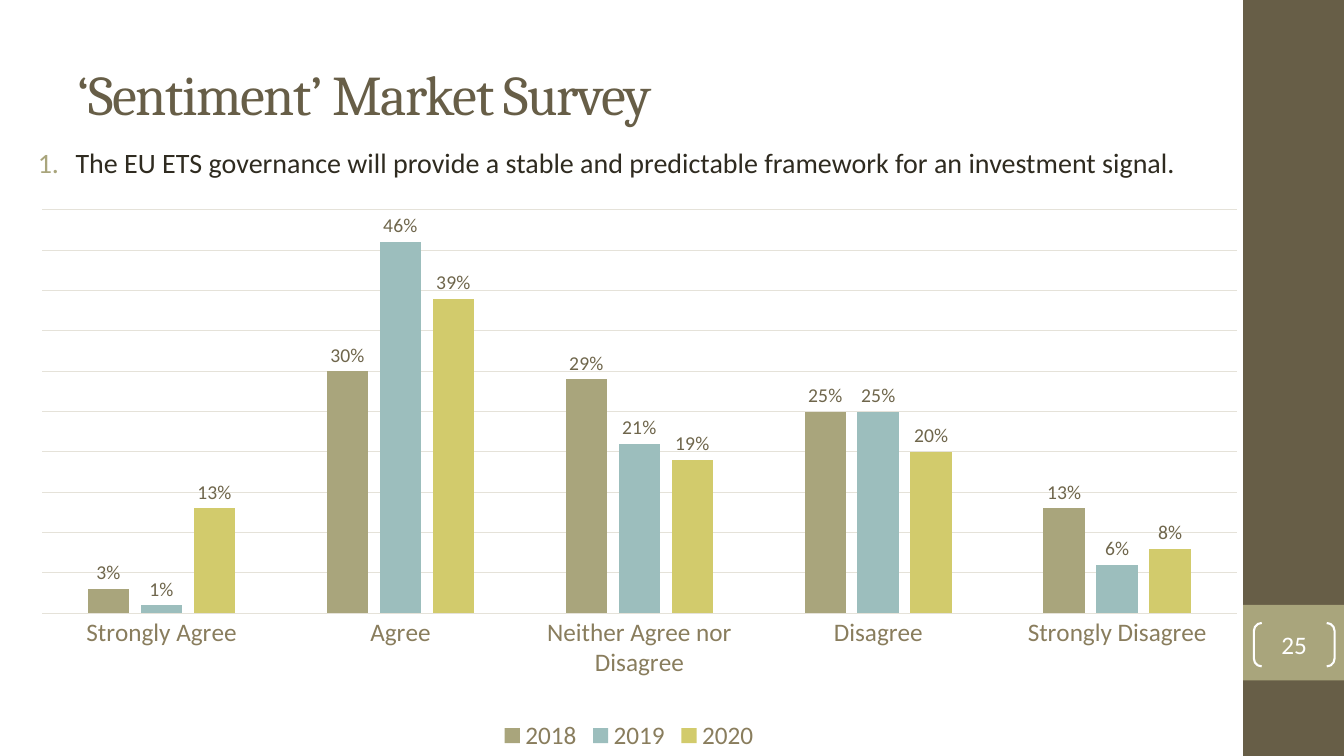
from dataclasses import dataclass

from pptx import Presentation
from pptx.chart.data import CategoryChartData
from pptx.dml.color import RGBColor
from pptx.enum import chart as charts, shapes, text
from pptx.oxml import parse_xml
from pptx.oxml.ns import nsdecls, qn
from pptx.util import Pt


@dataclass(frozen=True)
class Theme:
    heading_font: str = "Cambria"
    body_font: str = "Calibri"
    brown: str = "675E47"
    olive: str = "A9A57C"
    teal: str = "9CBEBD"
    yellow: str = "D2CB6C"
    ink: str = "2F2B20"
    axis_text: str = "897D5D"
    label_text: str = "6F664C"
    grid: str = "E5E2D9"
    white: str = "FFFFFF"
    title_size: int = 40
    statement_size: int = 20
    axis_size: int = 18
    label_size: int = 14


THEME = Theme()
CATEGORIES = ["Strongly Agree", "Agree", "Neither Agree nor Disagree",
              "Disagree", "Strongly Disagree"]
SERIES = [
    ("2018", THEME.olive, (0.03, 0.30, 0.29, 0.25, 0.13)),
    ("2019", THEME.teal, (0.01, 0.46, 0.21, 0.25, 0.06)),
    ("2020", THEME.yellow, (0.13, 0.39, 0.19, 0.20, 0.08)),
]


def rgb(color):
    return RGBColor.from_string(color)


def set_font(font, name, size, color):
    font.name = name
    font.size = Pt(size)
    font.color.rgb = rgb(color)


def place(shape, left, top, width, height):
    shape.left, shape.top = Pt(left), Pt(top)
    shape.width, shape.height = Pt(width), Pt(height)


def add_block(slide, left, top, width, height, color):
    block = slide.shapes.add_shape(
        shapes.MSO_SHAPE.RECTANGLE, Pt(left), Pt(top), Pt(width), Pt(height))
    block.shadow.inherit = False
    block.fill.solid()
    block.fill.fore_color.rgb = rgb(color)
    block.line.fill.background()


def add_page_number(slide, number):
    bracket = slide.shapes.add_shape(
        shapes.MSO_SHAPE.DOUBLE_BRACKET, Pt(895.7), Pt(445), Pt(57.6), Pt(31))
    bracket.adjustments[0] = 0.18
    bracket.shadow.inherit = False
    bracket.fill.background()
    bracket.line.color.rgb = rgb(THEME.white)
    bracket.line.width = Pt(1.5)
    frame = bracket.text_frame
    frame.margin_left = frame.margin_right = frame.margin_top = frame.margin_bottom = 0
    frame.vertical_anchor = text.MSO_ANCHOR.MIDDLE
    para = frame.paragraphs[0]
    para.text = number
    para.alignment = text.PP_ALIGN.CENTER
    set_font(para.font, THEME.body_font, THEME.axis_size, THEME.white)


def fill_title(title, words):
    place(title, 48, 21.6, 800, 90)
    frame = title.text_frame
    frame.auto_size = text.MSO_AUTO_SIZE.NONE
    frame.vertical_anchor = text.MSO_ANCHOR.MIDDLE
    para = frame.paragraphs[0]
    para.alignment = text.PP_ALIGN.LEFT
    span = para.add_run()
    span.text = words
    set_font(span.font, THEME.heading_font, THEME.title_size, THEME.brown)
    span.font._element.set("spc", "-100")


def fill_statement(body, words):
    """Write the survey statement as a numbered list item."""
    place(body, 10.8, 100, 837.4, 23)
    frame = body.text_frame
    frame.auto_size = text.MSO_AUTO_SIZE.NONE
    para = frame.paragraphs[0]
    para.text = words
    set_font(para.font, THEME.body_font, THEME.statement_size, THEME.ink)
    properties = para._p.get_or_add_pPr()
    properties.set("marL", str(Pt(36)))
    properties.set("indent", str(Pt(-27)))
    number_style = (
        f'<a:buClr {nsdecls("a")}><a:srgbClr val="{THEME.olive}"/></a:buClr>',
        f'<a:buFont {nsdecls("a")} typeface="+mj-lt"/>',
        f'<a:buAutoNum {nsdecls("a")} type="arabicPeriod"/>',
    )
    for position, xml in enumerate(number_style):
        properties.insert(position, parse_xml(xml))


def set_plot_layout(chart, **fractions):
    """Fix the inner plot area as fractions (x, y, w, h) of the chart."""
    area = chart._chartSpace.find(f'.//{qn("c:plotArea")}')
    for old in area.findall(qn("c:layout")):
        area.remove(old)
    sizes = "".join(f'<c:{key} val="{value}"/>' for key, value in fractions.items())
    area.insert(0, parse_xml(
        f'<c:layout {nsdecls("c")}><c:manualLayout><c:layoutTarget val="inner"/>'
        f'<c:xMode val="edge"/><c:yMode val="edge"/>{sizes}'
        '</c:manualLayout></c:layout>'))


def style_axes(chart):
    values = chart.value_axis
    values.minimum_scale, values.maximum_scale = 0, 0.5
    values.major_unit = 0.05
    values.has_major_gridlines = True
    values.visible = False
    categories = chart.category_axis
    categories.major_tick_mark = charts.XL_TICK_MARK.NONE
    set_font(categories.tick_labels.font, THEME.body_font, THEME.axis_size, THEME.axis_text)
    for line in (values.major_gridlines.format.line, categories.format.line):
        line.color.rgb = rgb(THEME.grid)
        line.width = Pt(0.75)


def style_series(series, color):
    series.format.fill.solid()
    series.format.fill.fore_color.rgb = rgb(color)
    labels = series.data_labels
    labels.show_value = True
    labels.number_format = "0%"
    labels.number_format_is_linked = False
    labels.position = charts.XL_LABEL_POSITION.OUTSIDE_END
    set_font(labels.font, THEME.body_font, THEME.label_size, THEME.label_text)


def add_survey_chart(slide):
    data = CategoryChartData(number_format="0%")
    data.categories = CATEGORIES
    for name, _, values in SERIES:
        data.add_series(name, values)
    chart = slide.shapes.add_chart(
        charts.XL_CHART_TYPE.COLUMN_CLUSTERED,
        Pt(10.8), Pt(137.5), Pt(877), Pt(402.5), data).chart
    set_font(chart.font, THEME.body_font, 10, THEME.ink)
    chart.has_title = False
    chart.has_legend = True
    chart.legend.position = charts.XL_LEGEND_POSITION.BOTTOM
    chart.legend.include_in_layout = False
    set_font(chart.legend.font, THEME.body_font, THEME.axis_size, THEME.axis_text)
    plot = chart.plots[0]
    plot.vary_by_categories = False
    plot.gap_width, plot.overlap = 219, -27
    for series, (_, color, _) in zip(plot.series, SERIES):
        style_series(series, color)
    style_axes(chart)
    set_plot_layout(chart, x=0.022, y=0.031, w=0.973, h=0.716)


def main():
    deck = Presentation()
    deck.slide_width, deck.slide_height = Pt(960), Pt(540)
    slide = deck.slides.add_slide(deck.slide_layouts[1])
    add_block(slide, 888, 0, 72, 540, THEME.brown)
    add_block(slide, 888, 432, 72, 54, THEME.olive)
    fill_title(slide.shapes.title, "‘Sentiment’ Market Survey")
    add_page_number(slide, "25")
    fill_statement(slide.placeholders[1],
                   "The EU ETS governance will provide a stable and predictable "
                   "framework for an investment signal.")
    add_survey_chart(slide)
    deck.save("out.pptx")


if __name__ == "__main__":
    main()
